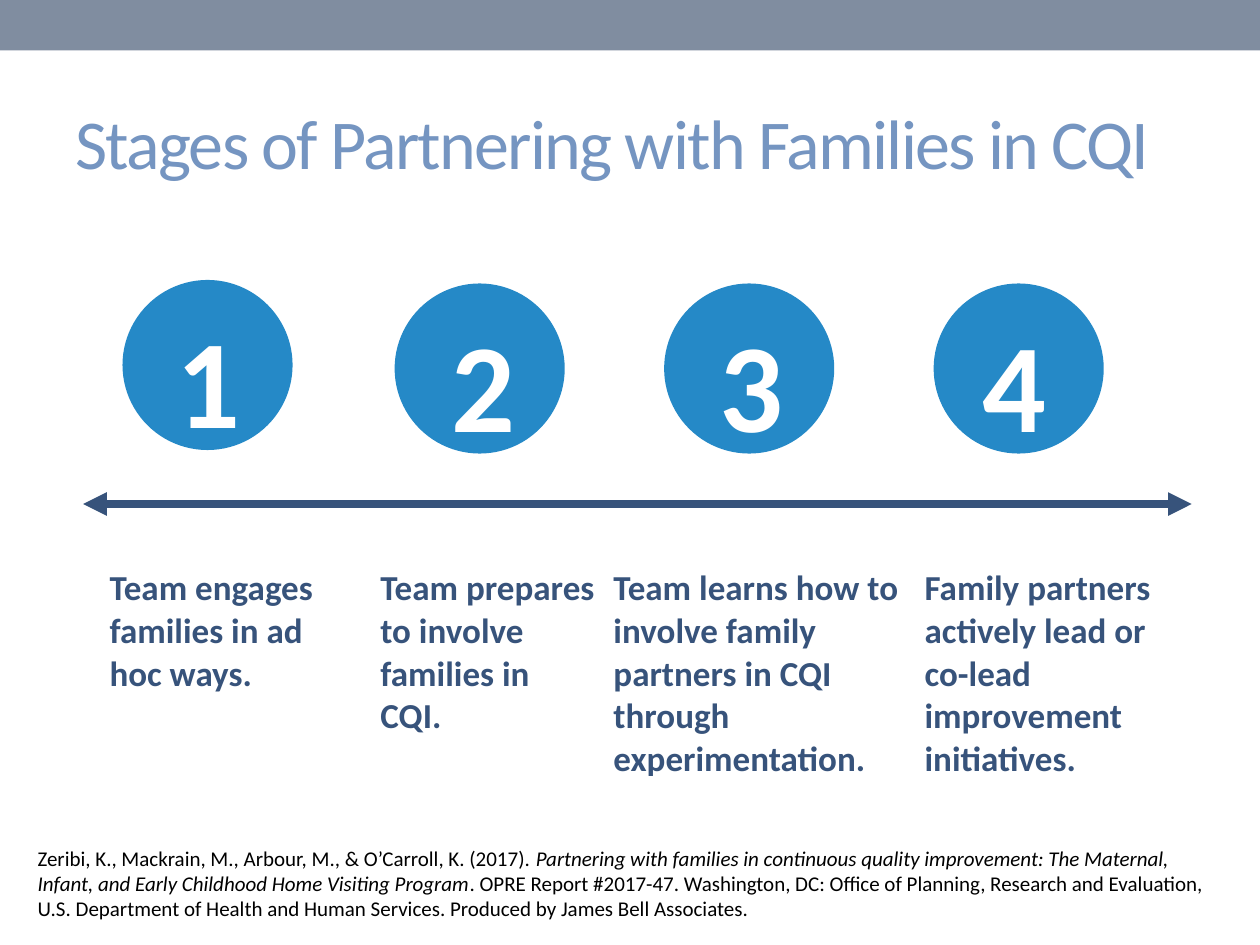
from lxml import etree
from pptx import Presentation
from pptx.dml.color import RGBColor
from pptx.enum import shapes, text
from pptx.oxml.ns import qn
from pptx.util import Pt

THEME = dict(font="Calibri", bar="808DA0", title="7595C1", circle="2589C7",
             navy="37537B", white="FFFFFF", black="000000",
             title_size=40, number_size=72, stage_size=20, source_size=12)

TITLE = "Stages of Partnering with Families in CQI"
# circle left, circle top, number left, column width, description
STAGES = [
    (70, 160, 89.3, 154.8, "Team engages families in ad hoc ways."),
    (225.5, 162, 246.2, 133.2, "Team prepares to involve families in CQI."),
    (379.5, 162, 399.6, 177.8,
     "Team learns how to involve family partners in CQI through experimentation."),
    (533.5, 162, 549.4, 164.9,
     "Family partners actively lead or co-lead improvement initiatives."),
]
SOURCE = [  # text, italic
    ("Zeribi, K., Mackrain, M., Arbour, M., & O’Carroll, K. (2017). ", False),
    ("Partnering with families in continuous quality improvement: The Maternal, "
     "Infant, and Early Childhood Home Visiting Program", True),
    (". OPRE Report #2017-47. Washington, DC: Office of Planning, Research and "
     "Evaluation, U.S. Department of Health and Human Services. "
     "Produced by James Bell Associates.", False),
]
CIRCLE = 97.2
NUMBER_W, NUMBER_H, NUMBER_RISE = 60, 86.4, 3.6
ARROW_LEFT, ARROW_RIGHT, ARROW_Y = 47.5, 681, 288
TABLE_LEFT, TABLE_TOP, TABLE_H = 57.6, 324, 120


def box(*lengths):
    return [Pt(n) for n in lengths]


def color(name):
    return RGBColor.from_string(THEME[name])


def add_run(p, words, size, ink, bold=False, italic=False):
    r = p.add_run()
    r.text = words
    f = r.font
    f.name, f.size, f.bold, f.italic = THEME["font"], Pt(THEME[size]), bold, italic
    f.color.rgb = color(ink)
    return r


def add_filled(parent, kind, fill, *at):
    sp = parent.add_shape(kind, *box(*at))
    sp.shadow.inherit = False
    sp.fill.solid()
    sp.fill.fore_color.rgb = color(fill)
    sp.line.fill.background()


def add_text(parent, *at):
    tf = parent.add_textbox(*box(*at)).text_frame
    tf.word_wrap = True
    return tf


def add_stage(s, number, left, top, number_left):
    group = s.shapes.add_group_shape().shapes
    add_filled(group, shapes.MSO_SHAPE.OVAL, "circle", left, top, CIRCLE, CIRCLE)
    tf = add_text(group, number_left, top - NUMBER_RISE, NUMBER_W, NUMBER_H)
    p = tf.paragraphs[0]
    p.alignment = text.PP_ALIGN.CENTER
    p.line_spacing, p.space_after = 1.15, Pt(10)
    add_run(p, str(number), "number_size", "white", bold=True)


def add_arrow(s):
    line = s.shapes.add_connector(shapes.MSO_CONNECTOR.STRAIGHT,
                                  *box(ARROW_LEFT, ARROW_Y, ARROW_RIGHT, ARROW_Y))
    line.line.color.rgb = color("navy")
    line.line.width = Pt(4.5)
    ln = line.line._get_or_add_ln()
    for end in ("a:headEnd", "a:tailEnd"):
        etree.SubElement(ln, qn(end), type="triangle")
    etree.SubElement(line._element.spPr, qn("a:effectLst"))


def add_descriptions(s):
    widths = [stage[3] for stage in STAGES]
    table = s.shapes.add_table(1, len(STAGES), *box(
        TABLE_LEFT, TABLE_TOP, sum(widths), TABLE_H)).table
    table.first_row = table.horz_banding = False
    for i, (*_, width, words) in enumerate(STAGES):
        table.columns[i].width = Pt(width)
        cell = table.cell(0, i)
        cell.fill.background()
        cell.margin_left = cell.margin_right = Pt(5)
        cell.margin_top = cell.margin_bottom = 0
        add_run(cell.text_frame.paragraphs[0], words, "stage_size", "navy", bold=True)


def main():
    prs = Presentation()
    prs.slide_width, prs.slide_height = box(720, 540)
    s = prs.slides.add_slide(prs.slide_layouts[6])
    add_filled(s.shapes, shapes.MSO_SHAPE.RECTANGLE, "bar", 0, 0, 720, 28.8)

    tf = add_text(s.shapes, 36, 41.8, 648, 77.8)
    tf.vertical_anchor = text.MSO_ANCHOR.MIDDLE
    r = add_run(tf.paragraphs[0], TITLE, "title_size", "title")
    r.font._element.set("spc", "-100")

    for number, (left, top, number_left, *_) in enumerate(STAGES, 1):
        add_stage(s, number, left, top, number_left)
    add_arrow(s)
    add_descriptions(s)

    tf = add_text(s.shapes, 14.4, 479.5, 692.6, 51.1)
    for words, italic in SOURCE:
        add_run(tf.paragraphs[0], words, "source_size", "black", italic=italic)
    prs.save("out.pptx")


if __name__ == "__main__":
    main()
